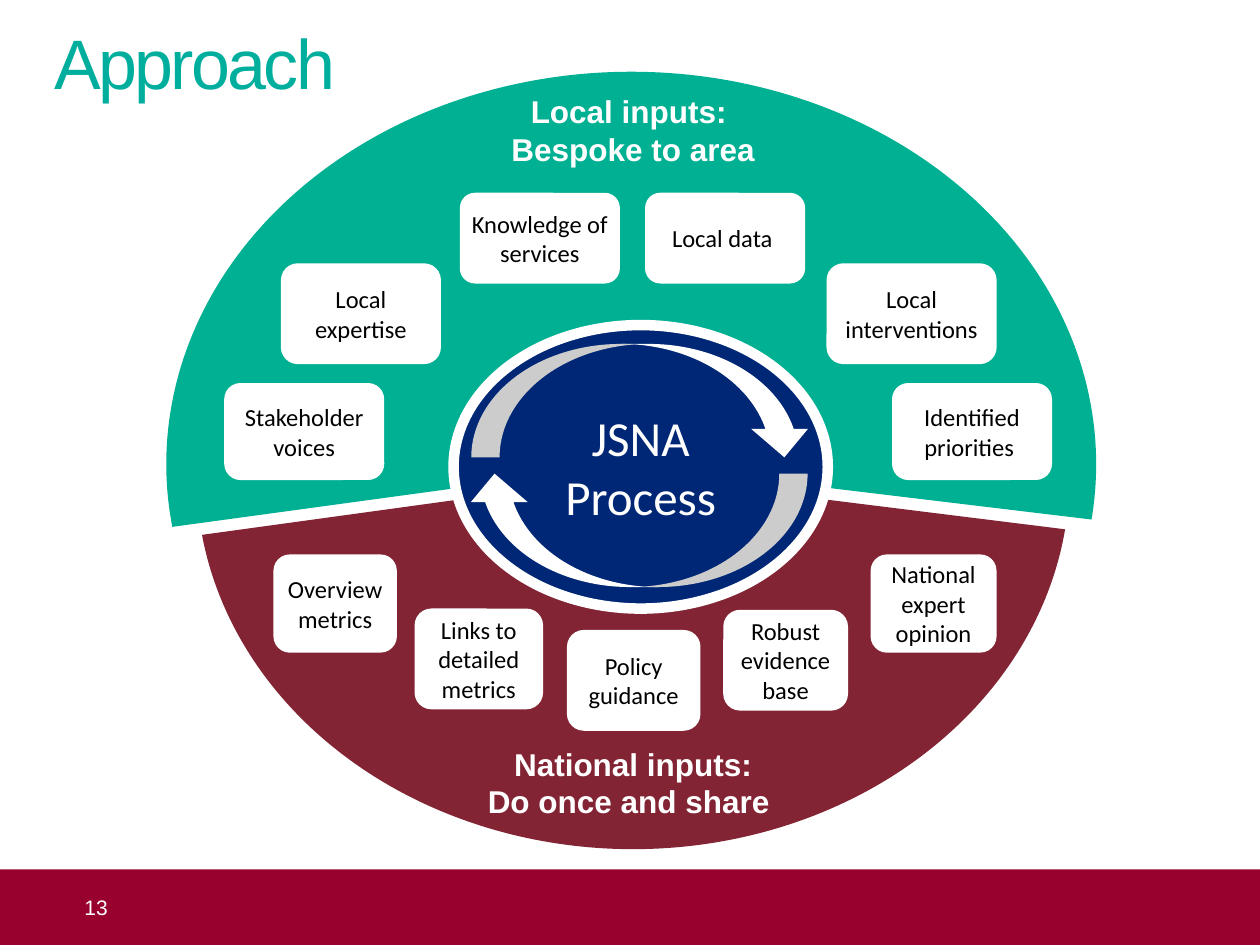
from pptx import Presentation
from pptx.dml.color import RGBColor
from pptx.enum.shapes import MSO_SHAPE
from pptx.enum.text import MSO_ANCHOR, MSO_AUTO_SIZE, PP_ALIGN
from pptx.oxml.ns import qn
from pptx.util import Inches, Pt

RECT, ROUNDED, OVAL = MSO_SHAPE.RECTANGLE, MSO_SHAPE.ROUNDED_RECTANGLE, MSO_SHAPE.OVAL
PIE, CURVED_ARROW = MSO_SHAPE.PIE, MSO_SHAPE.CURVED_DOWN_ARROW
MIDDLE = MSO_ANCHOR.MIDDLE
LEFT, CENTER = PP_ALIGN.LEFT, PP_ALIGN.CENTER
NO_FIT = MSO_AUTO_SIZE.NONE

COLORS = {
    "title": "00AE9E", "local": "00B092", "national": "822433",
    "core": "002776", "footer": "98002E", "white": "FFFFFF", "black": "000000",
}

LOCAL_CARDS = [
    ("Stakeholder voices", (1.78, 3.04, 1.27, 0.77)),
    ("Local expertise", (2.23, 2.09, 1.27, 0.8)),
    ("Knowledge of services", (3.65, 1.53, 1.27, 0.72)),
    ("Local data ", (5.12, 1.53, 1.27, 0.72)),
    ("Local interventions", (6.56, 2.09, 1.35, 0.8)),
    ("Identified priorities ", (7.08, 3.04, 1.27, 0.77)),
]
NATIONAL_CARDS = [
    ("Overview metrics", (2.17, 4.4, 0.98, 0.78)),
    ("Links to detailed metrics", (3.29, 4.83, 1.02, 0.8)),
    ("Policy guidance", (4.5, 5, 1.06, 0.8)),
    ("Robust evidence base", (5.74, 4.84, 0.99, 0.8)),
    ("National expert opinion", (6.91, 4.4, 1, 0.78)),
]


def rgb(name):
    """Return the named palette colour."""
    return RGBColor.from_string(COLORS[name])


def inches(box):
    """Convert a box of left, top, width and height to lengths."""
    return [Inches(length) for length in box]


def add_filled(page, kind, box, color, flips=()):
    """Add a plain filled shape without outline, mirrored as asked."""
    shape = page.shapes.add_shape(kind, *inches(box))
    shape.shadow.inherit = False
    shape.fill.solid()
    shape.fill.fore_color.rgb = rgb(color)
    shape.line.fill.background()
    for flip in flips:
        shape._element.spPr.find(qn("a:xfrm")).set(flip, "1")
    return shape


def write(shape, lines, size, font, color, align=CENTER, bold=False):
    """Write one formatted paragraph per line and return the text frame."""
    frame = shape.text_frame
    frame.text = "\n".join(lines)
    for para in frame.paragraphs:
        para.alignment = align
        para.font.size = Pt(size)
        para.font.name = font
        para.font.bold = bold
        para.font.color.rgb = rgb(color)
    return frame


def set_margins(frame, left, top, right, bottom):
    """Set the four inner margins of a text frame."""
    frame.margin_left, frame.margin_top = Inches(left), Inches(top)
    frame.margin_right, frame.margin_bottom = Inches(right), Inches(bottom)


def place_title(page, box, text):
    """Move and format the title placeholder."""
    title = page.shapes.title
    title.left, title.top, title.width, title.height = inches(box)
    frame = write(title, [text], 40, "Arial", "title", LEFT)
    set_margins(frame, 0, 0, 0, 0)
    frame.vertical_anchor = MIDDLE
    frame.auto_size = NO_FIT
    frame.paragraphs[0].runs[0].font._element.set("spc", "-150")


def add_footer(page, box, number):
    """Add the footer band with its page number."""
    band = add_filled(page, RECT, box, "footer")
    frame = write(band, [number], 12, "Arial", "white", LEFT)
    set_margins(frame, 0.67, 0, 0.1, 0)
    frame.vertical_anchor = MIDDLE


def add_half(page, box, color, angles, cards, flips=()):
    """Add one half of the wheel and its input cards."""
    half = add_filled(page, PIE, box, color, flips)
    for index, angle in enumerate(angles):
        half.adjustments[index] = angle * 0.6
    for text, card_box in cards:
        card = add_filled(page, ROUNDED, card_box, "white")
        frame = write(card, [text], 14, "Calibri", "black")
        set_margins(frame, 0.04, 0.05, 0.04, 0.05)
        frame.vertical_anchor = MIDDLE


def add_core(page, box):
    """Add the central process oval with its two cycle arrows."""
    left, top = box[:2]
    core = add_filled(page, OVAL, box, "core")
    core.line.color.rgb = rgb("white")
    core.line.width = Pt(6)
    write(core, ["JSNA Process"], 28, "Calibri", "white").vertical_anchor = MIDDLE
    add_filled(page, CURVED_ARROW, (left + 0.14, top + 0.15, 2.71, 0.9), "white")
    add_filled(page, CURVED_ARROW, (left + 0.1, top + 1.18, 2.71, 0.9), "white",
               ("flipH", "flipV"))


def add_heading(page, box, lines):
    """Add the bold heading of one half."""
    heading = page.shapes.add_textbox(*inches(box))
    write(heading, lines, 18, "Arial", "white", bold=True).word_wrap = False


def main():
    """Build the slide and save it."""
    deck = Presentation()
    deck.slide_width, deck.slide_height = Inches(10), Inches(7.5)
    page = deck.slides.add_slide(deck.slide_layouts[5])
    place_title(page, (0.43, 0.13, 8.78, 0.71), "Approach")
    add_footer(page, (0, 6.9, 10, 0.6), "13")
    add_half(page, (1.32, 0.57, 7.38, 6.23), "local", (353.15, 187.77),
             LOCAL_CARDS, ("flipV",))
    add_half(page, (1.56, 0.81, 6.93, 5.93), "national", (7.09, 172.17), NATIONAL_CARDS)
    add_core(page, (3.6, 2.58, 2.97, 2.25))
    add_heading(page, (3.95, 0.68, 2.15, 0.71), ["Local inputs: ", "Bespoke to area"])
    add_heading(page, (3.76, 5.86, 2.53, 0.71), ["National inputs:", "Do once and share "])
    deck.save("out.pptx")


if __name__ == "__main__":
    main()
